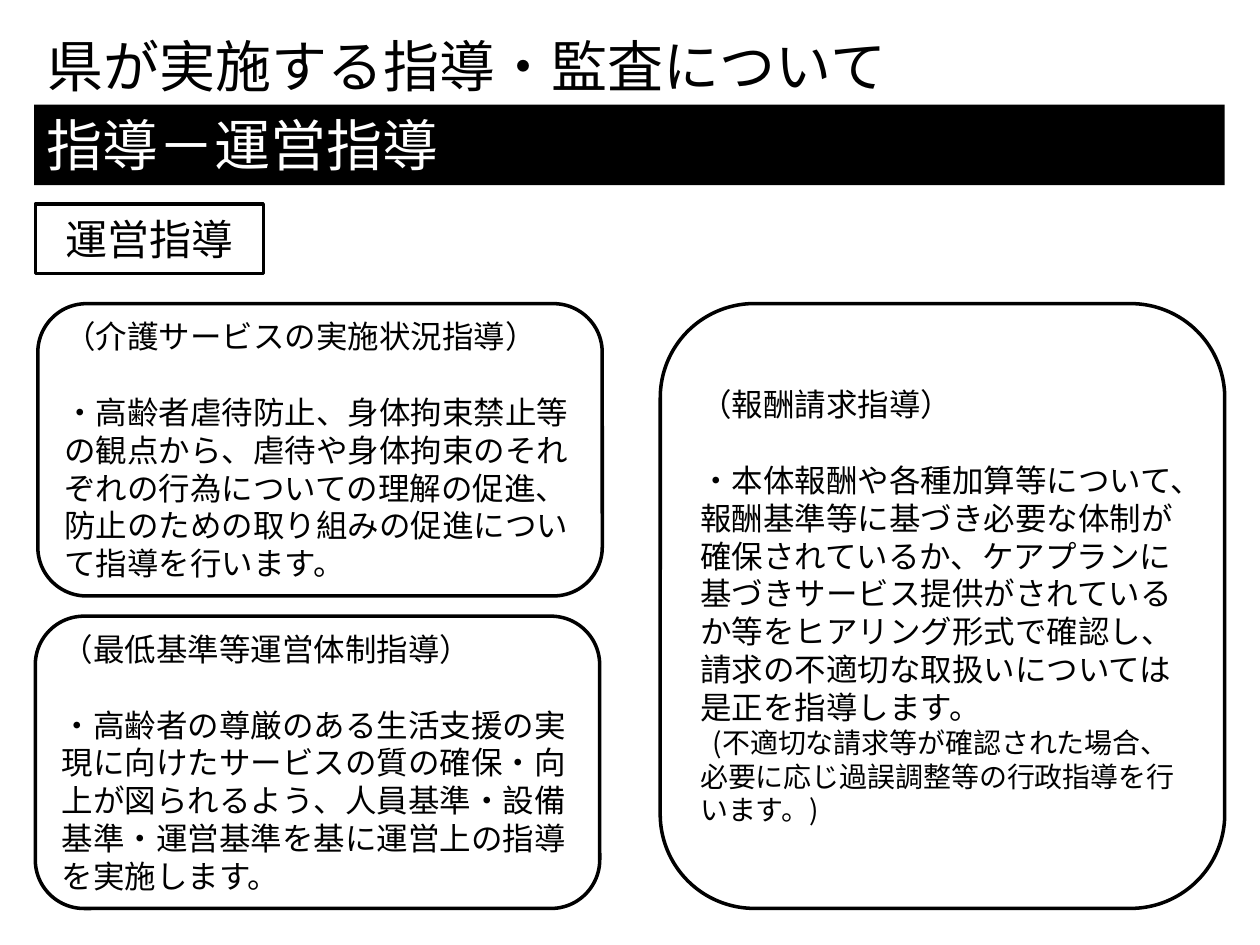
from lxml.etree import SubElement
from pptx import Presentation
from pptx.dml.color import RGBColor
from pptx.enum.shapes import MSO_SHAPE
from pptx.enum.text import MSO_ANCHOR, MSO_AUTO_SIZE, PP_ALIGN
from pptx.oxml.ns import qn
from pptx.util import Inches, Pt

FONT = "Noto Sans CJK JP"
LINE_FACTOR = 1.2
COLORS = {"ink": "000000", "paper": "FFFFFF"}

# Grid in inches
LEFT, RIGHT = 0.28, 5.24
TOP, BOTTOM = 2.41, 7.21
CARD_WIDTH, CARD_HEIGHT = 4.48, 2.32

presentation = Presentation()
presentation.slide_width, presentation.slide_height = Inches(10), Inches(7.5)
slide = presentation.slides.add_slide(presentation.slide_layouts[6])


def add_box(kind, left, top, width, height, fill=None, outlined=True):
    shape = slide.shapes.add_shape(kind, *map(Inches, (left, top, width, height)))
    shape.shadow.inherit = False
    if fill:
        shape.fill.solid()
        shape.fill.fore_color.rgb = RGBColor.from_string(COLORS[fill])
    else:
        shape.fill.background()
    if outlined:
        shape.line.color.rgb = RGBColor.from_string(COLORS["ink"])
        shape.line.width = Pt(2)
    else:
        shape.line.fill.background()
    return shape


def write(shape, paragraphs, color="ink", align=PP_ALIGN.LEFT, anchor=MSO_ANCHOR.MIDDLE):
    frame = shape.text_frame
    frame.word_wrap = True
    frame.vertical_anchor = anchor
    frame.text = "\n".join(text for text, size in paragraphs)
    for paragraph, (text, size) in zip(frame.paragraphs, paragraphs):
        paragraph.alignment = align
        paragraph.line_spacing = Pt(size * LINE_FACTOR)
        font = paragraph.runs[0].font
        font.name, font.size = FONT, Pt(size)
        font.color.rgb = RGBColor.from_string(COLORS[color])
        properties = paragraph.runs[0]._r.get_or_add_rPr()
        SubElement(properties, qn("a:ea")).set("typeface", FONT)
    return frame


# Title and section band
title = slide.shapes.add_textbox(Inches(LEFT), Inches(0.2), Inches(8.5), Inches(0.64))
band = add_box(MSO_SHAPE.RECTANGLE, 0.27, 0.83, 9.45, 0.64, "ink", outlined=False)
for shape, text, color in (
    (title, "県が実施する指導・監査について", "ink"),
    (band, "指導－運営指導", "paper"),
):
    frame = write(shape, [(text, 32)], color, anchor=MSO_ANCHOR.TOP)
    frame.auto_size = MSO_AUTO_SIZE.SHAPE_TO_FIT_TEXT

# Topic label
label = add_box(MSO_SHAPE.RECTANGLE, LEFT, 1.62, 1.81, 0.55)
write(label, [("運営指導", 24)], align=PP_ALIGN.CENTER)

# Guidance cards: left, top, height, heading, body, closing note
cards = [
    (LEFT + 0.02, TOP, CARD_HEIGHT, "（介護サービスの実施状況指導）",
     "・高齢者虐待防止、身体拘束禁止等の観点から、虐待や身体拘束のそれぞれの行為についての"
     "理解の促進、防止のための取り組みの促進について指導を行います。", None),
    (LEFT, BOTTOM - CARD_HEIGHT, CARD_HEIGHT, "（最低基準等運営体制指導）",
     "・高齢者の尊厳のある生活支援の実現に向けたサービスの質の確保・向上が図られるよう、"
     "人員基準・設備基準・運営基準を基に運営上の指導を実施します。", None),
    (RIGHT, TOP, BOTTOM - TOP, "（報酬請求指導）",
     "・本体報酬や各種加算等について、報酬基準等に基づき必要な体制が確保されているか、"
     "ケアプランに基づきサービス提供がされているか等をヒアリング形式で確認し、"
     "請求の不適切な取扱いについては是正を指導します。",
     "(不適切な請求等が確認された場合、必要に応じ過誤調整等の行政指導を行います。)"),
]
for left, top, height, heading, body, note in cards:
    card = add_box(MSO_SHAPE.ROUNDED_RECTANGLE, left, top, CARD_WIDTH, height)
    paragraphs = [(heading, 18), (body, 18)] + ([(note, 16)] if note else [])
    frame = write(card, paragraphs)
    frame.paragraphs[0].space_after = Pt(18 * LINE_FACTOR)
    if note:
        # First-line indent of the note
        frame.paragraphs[-1]._p.get_or_add_pPr().set("indent", str(Inches(0.1)))

presentation.save("out.pptx")
